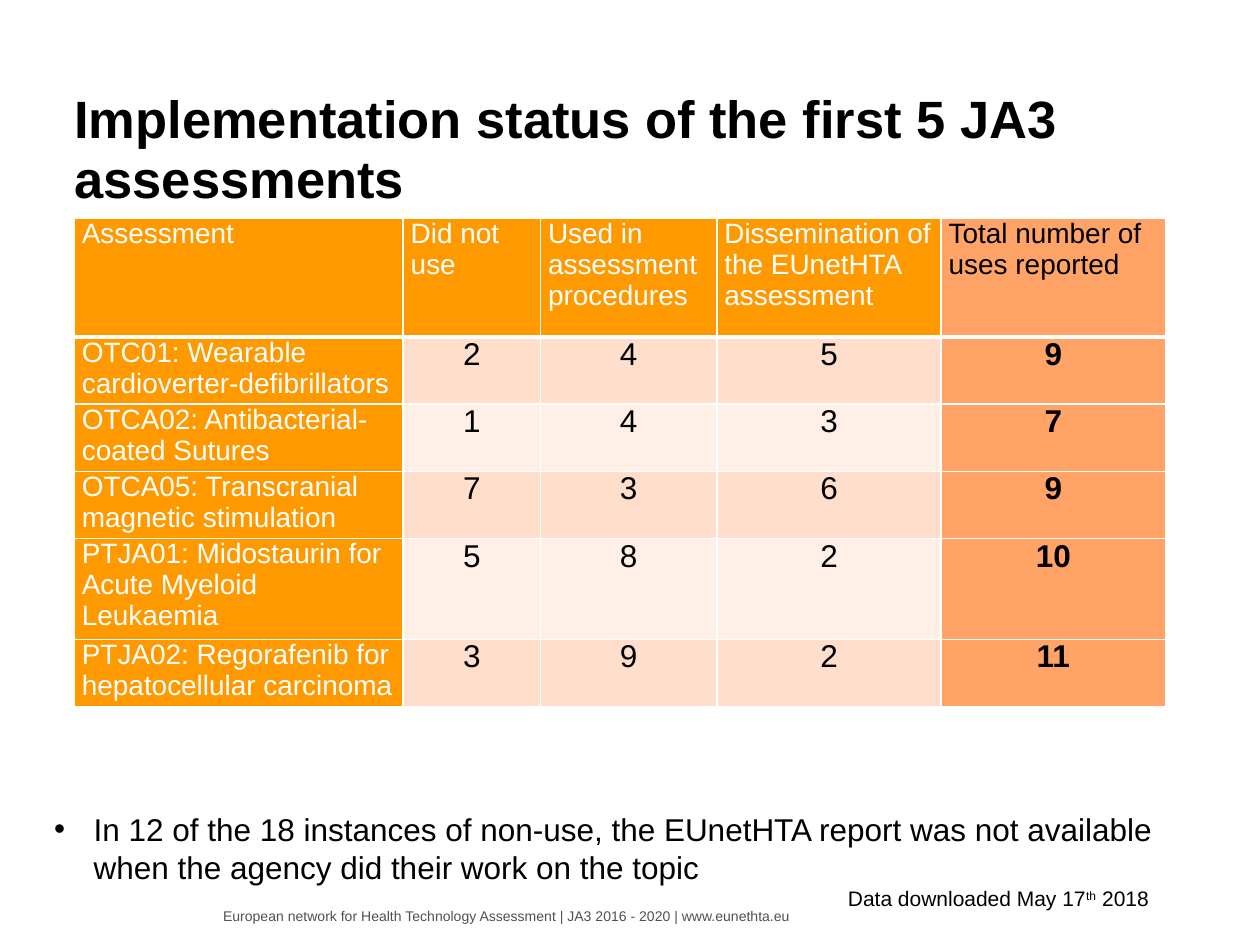
from dataclasses import dataclass

from lxml import etree
from pptx import Presentation
from pptx.dml.color import RGBColor
from pptx.enum import text as t
from pptx.oxml import ns
from pptx.util import Pt


@dataclass(frozen=True)
class Theme:
    face: str = "Arial"
    ink: str = "000000"
    paper: str = "FFFFFF"
    footer_grey: str = "505050"
    orange: str = "FF9900"
    total: str = "FFA366"
    bands: tuple = ("FFDECC", "FFEFE7")
    title_size: float = 30
    body_size: float = 18
    label_size: float = 16
    note_size: float = 12
    footer_size: float = 8


THEME = Theme()

COLUMN_WIDTHS = (187.92, 78.48, 100.8, 128.16, 128.16)
HEADER_HEIGHT, ROW_HEIGHT = 67.68, 38.3
HEADINGS = ("Assessment", "Did not use", "Used in assessment procedures",
            "Dissemination of the EUnetHTA assessment", "Total number of uses reported")
ASSESSMENTS = (
    ("OTC01: Wearable cardioverter-defibrillators", 2, 4, 5, 9),
    ("OTCA02: Antibacterial-coated Sutures", 1, 4, 3, 7),
    ("OTCA05: Transcranial magnetic stimulation", 7, 3, 6, 9),
    ("PTJA01: Midostaurin for Acute Myeloid Leukaemia", 5, 8, 2, 10),
    ("PTJA02: Regorafenib for hepatocellular carcinoma", 3, 9, 2, 11),
)


def apply(target, values):
    for name, value in values.items():
        setattr(target, name, value)


def set_font(font, size, color, bold=False):
    apply(font, {"name": THEME.face, "size": Pt(size), "bold": bold})
    font.color.rgb = RGBColor.from_string(color)


def set_margins(target, side=0):
    apply(target, {"margin_left": Pt(side), "margin_right": Pt(side),
                   "margin_top": 0, "margin_bottom": 0})


def add_line_of_text(slide, box, words, size, color):
    """Add a wrapping text box and return its paragraph."""
    frame = slide.shapes.add_textbox(*map(Pt, box)).text_frame
    frame.word_wrap = True
    set_margins(frame)
    paragraph = frame.paragraphs[0]
    paragraph.add_run().text = words
    set_font(paragraph.runs[0].font, size, color)
    return paragraph


def place_title(slide, box):
    title = slide.shapes.title
    apply(title, dict(zip(("left", "top", "width", "height"), map(Pt, box))))
    frame = title.text_frame
    frame.text = "Implementation status of the first 5 JA3 assessments"
    set_margins(frame)
    apply(frame, {"vertical_anchor": t.MSO_ANCHOR.BOTTOM, "word_wrap": True,
                  "auto_size": t.MSO_AUTO_SIZE.NONE})
    paragraph = frame.paragraphs[0]
    apply(paragraph, {"alignment": t.PP_ALIGN.LEFT, "line_spacing": 0.95})
    set_font(paragraph.runs[0].font, THEME.title_size, THEME.ink, bold=True)


def set_borders(cell, bottom):
    properties = cell._tc.get_or_add_tcPr()
    widths = {"lnL": 1, "lnR": 1, "lnT": 1, "lnB": bottom}
    for index, (side, width) in enumerate(widths.items()):
        line = etree.Element(ns.qn(f"a:{side}"), w=str(Pt(width)))
        fill = etree.SubElement(line, ns.qn("a:solidFill"))
        etree.SubElement(fill, ns.qn("a:srgbClr"), val=THEME.paper)
        properties.insert(index, line)


def format_cell(cell, row, column):
    is_header, is_label = row == 0, column == 0
    is_total = column == len(HEADINGS) - 1
    is_count = not (is_header or is_label)

    # Total column first, then header and labels, then banded counts
    if is_total:
        fill = THEME.total
    elif is_count:
        fill = THEME.bands[(row - 1) % 2]
    else:
        fill = THEME.orange
    cell.fill.solid()
    cell.fill.fore_color.rgb = RGBColor.from_string(fill)
    set_borders(cell, bottom=3 if is_header else 1)
    set_margins(cell, side=5.76 if is_count else 4.32)

    paragraph = cell.text_frame.paragraphs[0]
    paragraph.alignment = t.PP_ALIGN.CENTER if is_count else t.PP_ALIGN.LEFT
    set_font(paragraph.runs[0].font,
             THEME.body_size if is_count else THEME.label_size,
             THEME.ink if is_count or is_total else THEME.paper,
             bold=is_count and is_total)


def place_table(slide, left, top):
    records = (HEADINGS, *ASSESSMENTS)
    heights = [HEADER_HEIGHT] + [ROW_HEIGHT] * len(ASSESSMENTS)
    table = slide.shapes.add_table(
        len(records), len(HEADINGS), Pt(left), Pt(top),
        Pt(sum(COLUMN_WIDTHS)), Pt(sum(heights))).table
    for column, width in zip(table.columns, COLUMN_WIDTHS):
        column.width = Pt(width)
    for row, (record, height) in enumerate(zip(records, heights)):
        table.rows[row].height = Pt(height)
        for column, value in enumerate(record):
            cell = table.cell(row, column)
            cell.text = str(value)
            format_cell(cell, row, column)


def place_finding(slide, box):
    paragraph = add_line_of_text(
        slide, box,
        "In 12 of the 18 instances of non-use, the EUnetHTA report was not available "
        "when the agency did their work on the topic", THEME.body_size, THEME.ink)
    properties = paragraph._p.get_or_add_pPr()
    properties.set("marL", str(Pt(22.5)))
    properties.set("indent", str(Pt(-22.5)))
    etree.SubElement(properties, ns.qn("a:buFont"), typeface=THEME.face)
    etree.SubElement(properties, ns.qn("a:buChar"), char="•")


def place_download_date(slide, box):
    paragraph = add_line_of_text(slide, box, "Data downloaded May 17",
                                 THEME.note_size, THEME.ink)
    for words in ("th", " 2018"):
        run = paragraph.add_run()
        run.text = words
        set_font(run.font, THEME.note_size, THEME.ink)
    ordinal = paragraph.runs[1]
    ordinal._r.get_or_add_rPr().set("baseline", "30000")


def place_footer(slide, box):
    add_line_of_text(
        slide, box,
        "European network for Health Technology Assessment | JA3 2016 - 2020 | www.eunethta.eu",
        THEME.footer_size, THEME.footer_grey)


def main():
    deck = Presentation()
    apply(deck, {"slide_width": Pt(720), "slide_height": Pt(540)})
    slide = deck.slides.add_slide(deck.slide_layouts.get_by_name("Title Only"))
    place_footer(slide, (127.44, 518.4, 337.68, 9.36))
    place_title(slide, (42.48, 46.08, 635.04, 74.16))
    place_table(slide, 42.48, 124.8)
    place_finding(slide, (30.96, 462.96, 635.04, 43.92))
    place_download_date(slide, (484.56, 506.16, 209.52, 14.4))
    deck.save("out.pptx")


if __name__ == "__main__":
    main()
